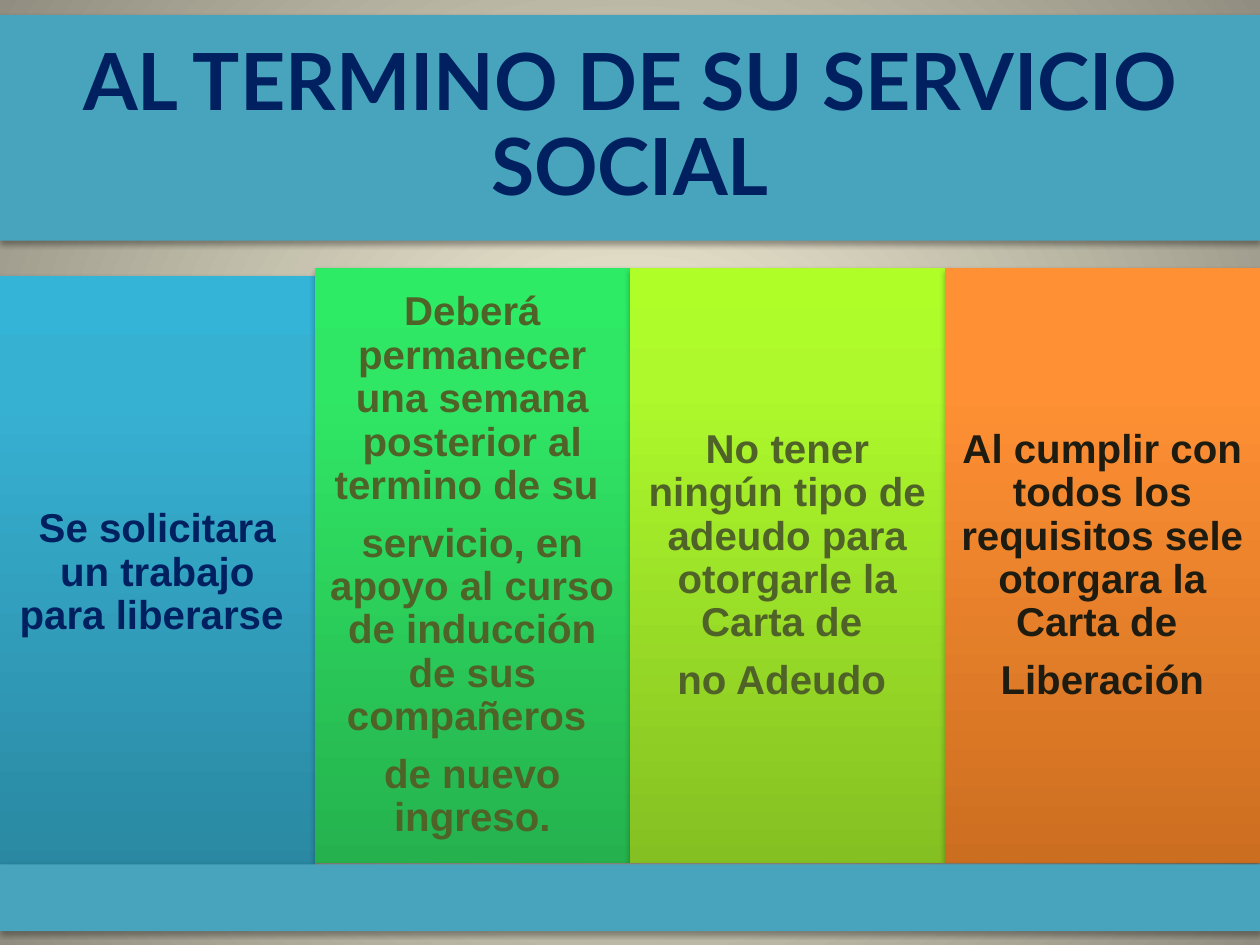
from lxml import etree
from pptx import Presentation
from pptx import util as u
from pptx.dml.color import RGBColor
from pptx.enum import shapes, text
from pptx.oxml.ns import nsdecls, qn

TEAL = RGBColor(0x48, 0xA4, 0xBD)
NAVY = RGBColor(0x00, 0x20, 0x60)
OLIVE = RGBColor(0x4F, 0x62, 0x28)
BLACK = RGBColor(0x1E, 0x1C, 0x11)


def rgb(*codes):
    return [RGBColor.from_string(c) for c in codes]


BACKGROUND = rgb("FCF7DD", "918E81")
TITLE = "AL TERMINO DE SU SERVICIO SOCIAL"
# top, text colour, gradient from bottom to top, paragraphs
COLUMNS = [
    (2.19, NAVY, rgb("2A88A2", "37B1D2", "34B4D6"),
     ["Se solicitara un trabajo para liberarse "]),
    (2.13, OLIVE, rgb("25B24E", "30E765", "2DEB64"),
     ["Deberá permanecer una semana posterior al termino de su ",
      "servicio, en apoyo al curso de inducción de sus compañeros ",
      "de nuevo ingreso."]),
    (2.13, OLIVE, rgb("85C022", "ADF92C", "AFFE28"),
     ["No tener ningún tipo de adeudo para otorgarle la Carta de ",
      "no Adeudo "]),
    (2.13, BLACK, rgb("CC6E20", "FF9034", "FF9136"),
     ["Al cumplir con todos los requisitos sele otorgara la Carta de ",
      "Liberación"]),
]
SLIDE_W, COLUMN_H = 10, 4.72
UPWARD = '<a:lin ang="16200000" scaled="0"/>'
RADIAL = ('<a:path path="circle"><a:fillToRect l="50000" t="50000" '
          'r="50000" b="50000"/></a:path>')


def set_gradient(parent, stops, direction):
    """Swap the solid fill inside parent for a gradient of (percent, colour) stops."""
    gs = "".join(f'<a:gs pos="{pos * 1000}"><a:srgbClr val="{color}"/></a:gs>'
                 for pos, color in stops)
    grad = etree.fromstring(f'<a:gradFill {nsdecls("a")} rotWithShape="1">'
                            f'<a:gsLst>{gs}</a:gsLst>{direction}</a:gradFill>')
    parent.replace(parent.find(qn("a:solidFill")), grad)


def add_panel(s, left, top, width, height, color):
    sp = s.shapes.add_shape(shapes.MSO_SHAPE.RECTANGLE, *map(u.Inches, (left, top, width, height)))
    sp.fill.solid()
    sp.fill.fore_color.rgb = color
    sp.line.fill.background()
    sp.shadow.inherit = False
    effects = sp._element.spPr.find(qn("a:effectLst"))
    effects.append(etree.fromstring(
        f'<a:outerShdw {nsdecls("a")} blurRad="40000" dist="23000" dir="5400000" '
        'rotWithShape="0"><a:srgbClr val="000000"><a:alpha val="35000"/>'
        '</a:srgbClr></a:outerShdw>'))
    return sp


def write(sp, paragraphs, *, font, size, color, inset):
    tf = sp.text_frame
    tf.word_wrap = True
    tf.vertical_anchor = text.MSO_ANCHOR.MIDDLE
    tf.margin_left = tf.margin_right = tf.margin_top = tf.margin_bottom = u.Inches(inset)
    for i, words in enumerate(paragraphs):
        p = tf.add_paragraph() if i else tf.paragraphs[0]
        p.alignment = text.PP_ALIGN.CENTER
        p.line_spacing = 0.9
        p.space_after = u.Pt(round(size * 0.35))
        r = p.add_run()
        r.text = words
        r.font.name, r.font.size, r.font.bold = font, u.Pt(size), True
        r.font.color.rgb = color


def main():
    prs = Presentation()
    prs.slide_width, prs.slide_height = u.Inches(SLIDE_W), u.Inches(7.5)
    s = prs.slides.add_slide(prs.slide_layouts[6])
    s.background.fill.solid()
    set_gradient(s.element.find(".//" + qn("p:bgPr")), zip((0, 100), BACKGROUND), RADIAL)

    title = add_panel(s, 0, 0.12, SLIDE_W, 1.79, TEAL)
    write(title, [TITLE], font="Lato", size=45, color=NAVY, inset=0.19)

    width = SLIDE_W / len(COLUMNS)
    for i, (top, color, shades, paragraphs) in enumerate(COLUMNS):
        column = add_panel(s, i * width, top, width, COLUMN_H, shades[0])
        set_gradient(column._element.spPr, zip((0, 80, 100), shades), UPWARD)
        write(column, paragraphs, font="Arial", size=23, color=color, inset=0.1)

    add_panel(s, 0, 6.86, SLIDE_W, 0.53, TEAL)
    prs.save("out.pptx")


if __name__ == "__main__":
    main()
